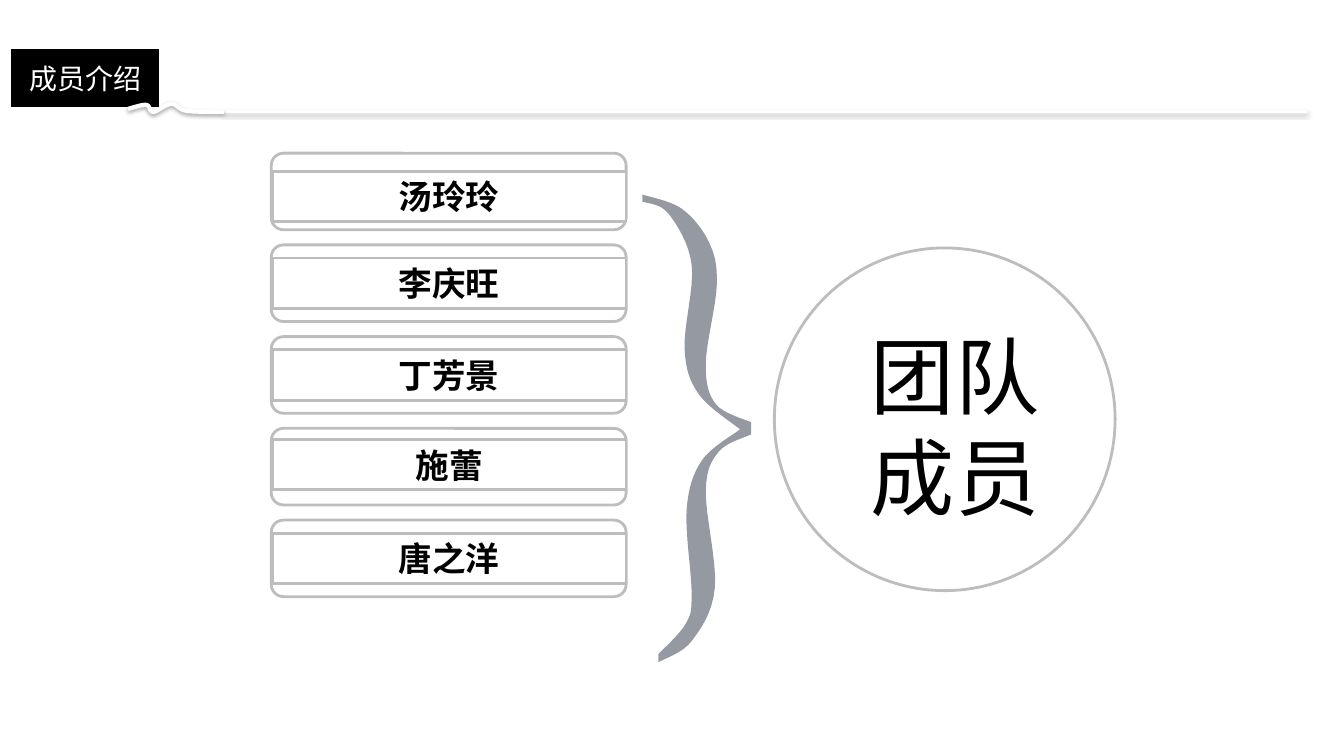
from dataclasses import dataclass

from lxml import etree
from pptx import Presentation
from pptx import util as u
from pptx.dml.color import RGBColor
from pptx.enum import shapes, text
from pptx.oxml.ns import qn

PX = 9144  # EMU per px, 100 px to the inch
CURVE_STEPS = 8


@dataclass(frozen=True)
class Theme:
    black: str = "000000"
    white: str = "FFFFFF"
    outline: str = "BDBDBD"
    brace: str = "959AA2"
    name_font: str = "Noto Sans CJK SC"
    header_font: str = "Roboto Condensed"
    team_font: str = "TeX Gyre Adventor"
    header_size: int = 20
    name_size: int = 24
    team_size: int = 60
    line_width: int = 2
    squiggle_width: int = 3


THEME = Theme()

# Each name with the top of its label
MEMBERS = {"汤玲玲": 170, "李庆旺": 256, "丁芳景": 347, "施蕾": 436, "唐之洋": 529}

# Edges of the brace, clockwise, each a smooth curve through its points
BRACE = [
    [(637, 193), (676, 207), (703, 240), (711, 282), (700, 361), (710, 401), (745, 419)],
    [(745, 431), (713, 448), (700, 487), (709, 583), (686, 636), (653, 657)],
    [(653, 649), (680, 619), (686, 589), (681, 506), (696, 457), (734, 426)],
    [(734, 426), (693, 391), (679, 346), (686, 263), (663, 212), (637, 200)],
]
SQUIGGLE = [[(127, 108), (145, 104), (152, 111), (170, 103), (185, 110), (222, 111)]]


def set_format(target, values):
    for name, value in values.items():
        setattr(target, name, value)


def emu(*lengths):
    return [round(length * PX) for length in lengths]


def set_line(line, color, width):
    line.color.rgb = RGBColor.from_string(color)
    line.width = u.Pt(width)


def paint(shape, fill=None, line=None, width=THEME.line_width):
    if fill:
        shape.fill.solid()
        shape.fill.fore_color.rgb = RGBColor.from_string(fill)
    else:
        shape.fill.background()
    if line:
        set_line(shape.line, line, width)
    else:
        shape.line.fill.background()
    shape.shadow.inherit = False


def cast_shadow(shape, opacity, distance):
    properties = shape._element.spPr
    effects = properties.find(qn("a:effectLst"))
    if effects is None:
        effects = etree.SubElement(properties, qn("a:effectLst"))
    shadow = etree.SubElement(
        effects, qn("a:outerShdw"), blurRad=str(u.Pt(3.1)),
        dist=str(u.Pt(distance)), dir="5400000", algn="t", rotWithShape="0")
    color = etree.SubElement(shadow, qn("a:srgbClr"), val=THEME.black)
    etree.SubElement(color, qn("a:alpha"), val=str(opacity * 1000))


def write(shape, lines, font, size, color, bold=False, align=text.PP_ALIGN.CENTER,
          anchor=text.MSO_ANCHOR.MIDDLE, margins=(10, 5)):
    frame = shape.text_frame
    side, end = emu(*margins)
    set_format(frame, {
        "word_wrap": True, "auto_size": text.MSO_AUTO_SIZE.NONE,
        "vertical_anchor": anchor, "margin_left": side, "margin_right": side,
        "margin_top": end, "margin_bottom": end})
    for index, line in enumerate(lines):
        paragraph = frame.add_paragraph() if index else frame.paragraphs[0]
        paragraph.alignment = align
        run = paragraph.add_run()
        run.text = line
        set_format(run.font, {"name": font, "size": u.Pt(size), "bold": bold})
        run.font.color.rgb = RGBColor.from_string(color)
        # East Asian characters take their own typeface
        etree.SubElement(run._r.get_or_add_rPr(), qn("a:ea"), typeface=font)


def add_box(parent, kind, box, fill, line):
    shape = parent.add_shape(kind, *emu(*box))
    paint(shape, fill, line)
    return shape


def smooth(edge):
    """Run a Catmull-Rom curve through the points of an edge."""
    padded = [edge[0], *edge, edge[-1]]
    points = [edge[0]]
    for before, start, end, after in zip(padded, padded[1:], padded[2:], padded[3:]):
        for step in range(1, CURVE_STEPS + 1):
            t = step / CURVE_STEPS
            points.append(tuple(
                b + t / 2 * (c - a + t * (2 * a - 5 * b + 4 * c - d
                                          + t * (3 * b - a - 3 * c + d)))
                for a, b, c, d in zip(before, start, end, after)))
    return points


def add_outline(slide, edges, close):
    start, *rest = [emu(*point) for edge in edges for point in smooth(edge)]
    builder = slide.shapes.build_freeform(*start)
    builder.add_line_segments(rest, close=close)
    return builder.convert_to_shape()


def add_member(slide, top, name, label_top):
    group = slide.shapes.add_group_shape().shapes
    card = add_box(group, shapes.MSO_SHAPE.ROUNDED_RECTANGLE, (269, top, 352, 76),
                   THEME.white, THEME.outline)
    card.adjustments[0] = 0.16
    label = add_box(group, shapes.MSO_SHAPE.RECTANGLE, (270, label_top, 351, 50),
                    THEME.white, THEME.outline)
    write(label, [name], THEME.name_font, THEME.name_size, THEME.black, bold=True,
          margins=(10, 0))


def add_header(slide):
    tag = add_box(slide.shapes, shapes.MSO_SHAPE.RECTANGLE, (10, 47, 149, 61),
                  THEME.black, THEME.white)
    write(tag, ["成员介绍"], THEME.header_font, THEME.header_size, THEME.white,
          margins=(14, 7))
    rule = slide.shapes.add_connector(shapes.MSO_CONNECTOR.STRAIGHT,
                                      *emu(221, 111, 1296, 111))
    set_line(rule.line, THEME.white, THEME.line_width)
    cast_shadow(rule, 38, 1.6)
    squiggle = add_outline(slide, SQUIGGLE, close=False)
    paint(squiggle, line=THEME.white, width=THEME.squiggle_width)
    cast_shadow(squiggle, 35, 1.8)


def main():
    presentation = Presentation()
    set_format(presentation, {"slide_width": 1333 * PX, "slide_height": 750 * PX})
    slide = presentation.slides.add_slide(presentation.slide_layouts[6])

    # Brace and member cards
    paint(add_outline(slide, BRACE, close=True), fill=THEME.brace)
    for index, (name, label_top) in enumerate(MEMBERS.items()):
        add_member(slide, 152 + 91 * index, name, label_top)

    # Team circle, header, then the circle's caption
    add_box(slide.shapes, shapes.MSO_SHAPE.OVAL, (768, 246, 338, 340),
            THEME.white, THEME.outline)
    add_header(slide)
    caption = slide.shapes.add_textbox(*emu(854, 317, 205, 212))
    write(caption, ["团队", "成员"], THEME.team_font, THEME.team_size, THEME.black,
          align=text.PP_ALIGN.LEFT, anchor=text.MSO_ANCHOR.TOP)
    presentation.save("out.pptx")


if __name__ == "__main__":
    main()
